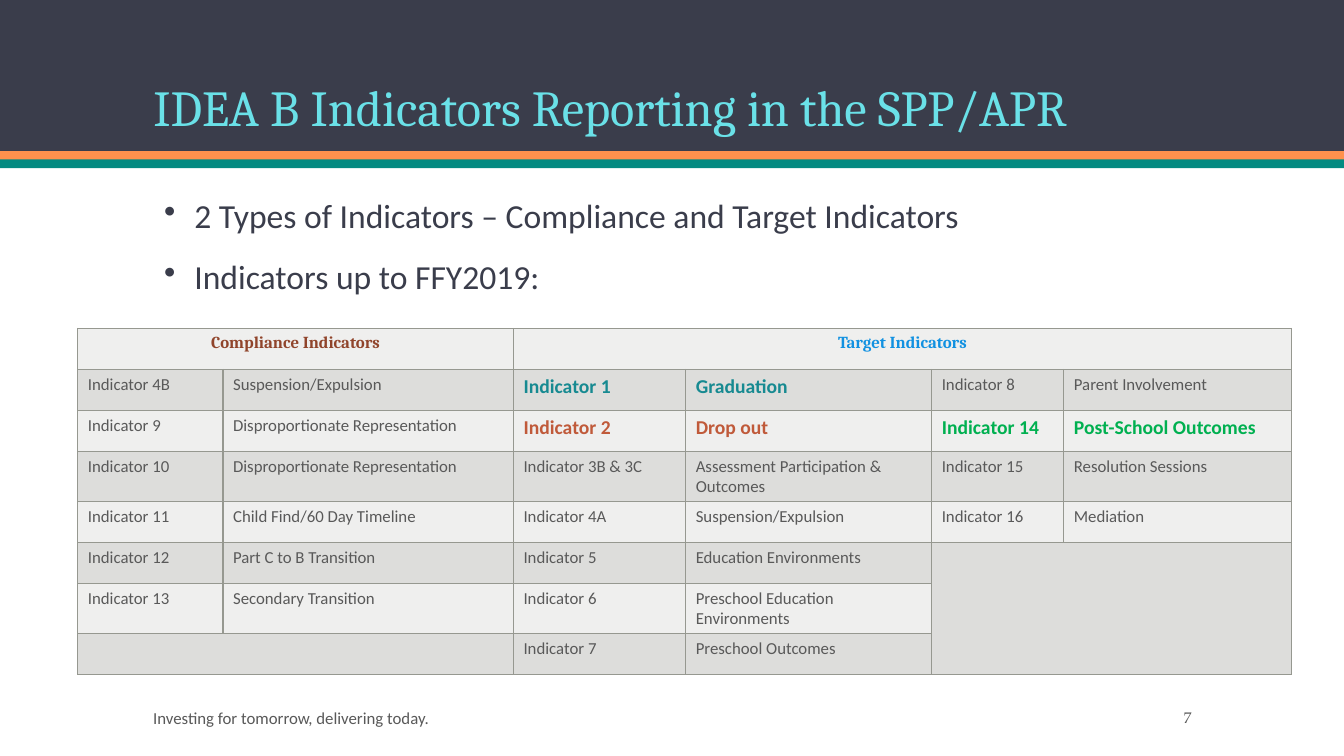
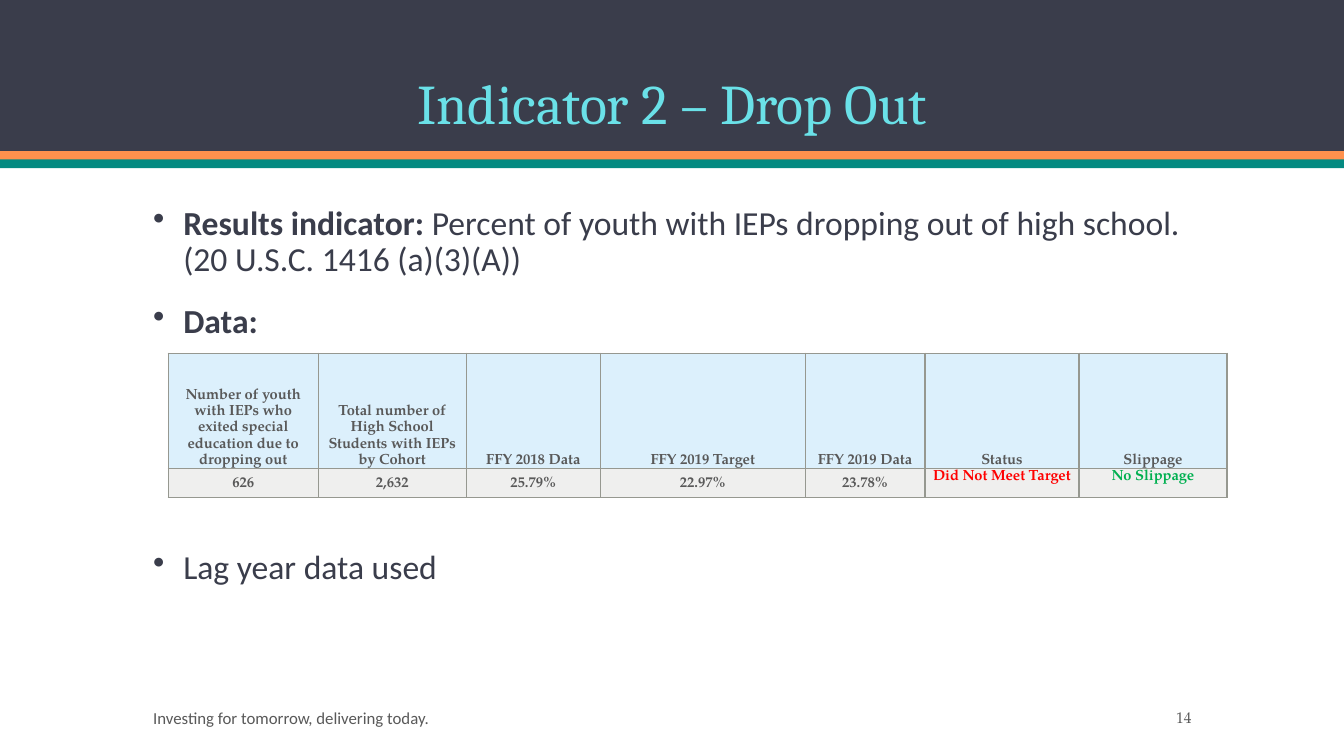
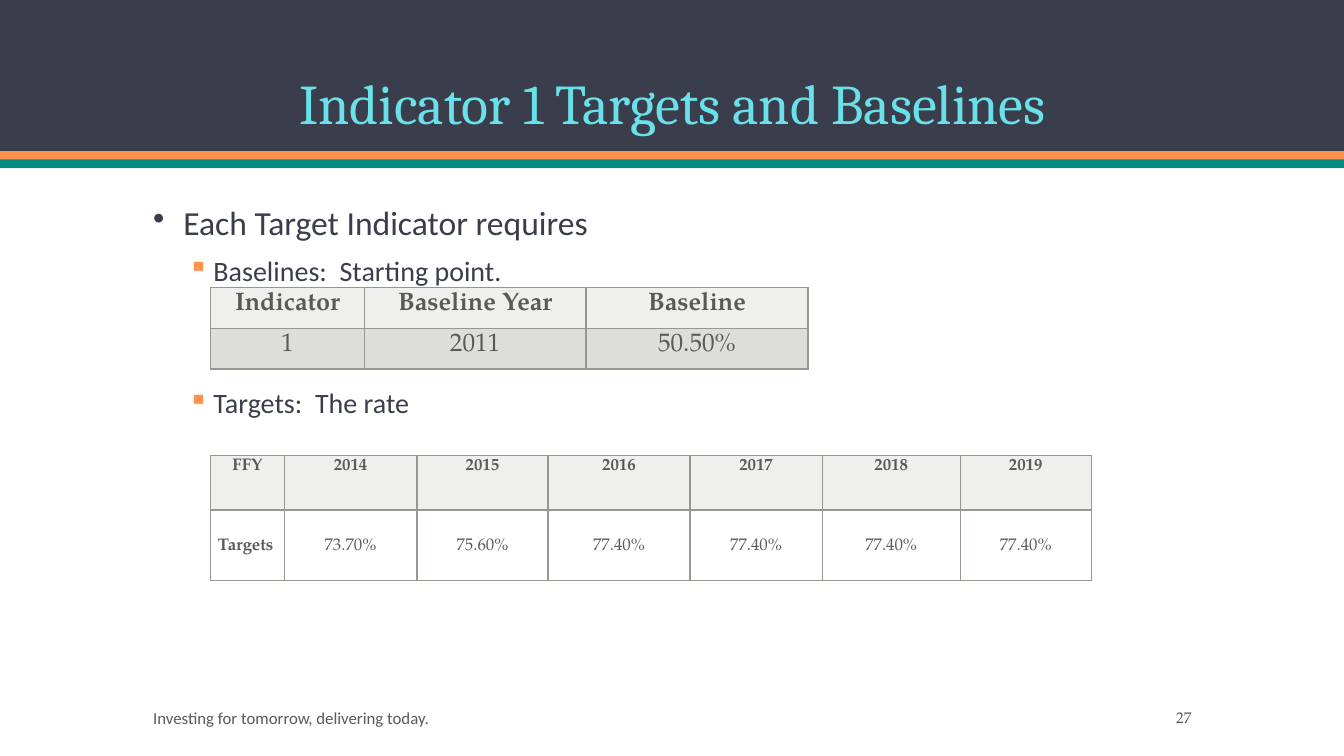
"""Build three slides on indicator reporting, drop-out data and targets."""
from dataclasses import dataclass, replace
from itertools import product

from lxml import etree
from pptx import Presentation
from pptx.dml.color import RGBColor
from pptx.enum.shapes import MSO_SHAPE
from pptx.enum.text import MSO_ANCHOR, MSO_AUTO_SIZE, PP_ALIGN
from pptx.oxml.ns import qn
from pptx.util import Cm, Pt

RECTANGLE = MSO_SHAPE.RECTANGLE
LEFT, CENTER, RIGHT = PP_ALIGN.LEFT, PP_ALIGN.CENTER, PP_ALIGN.RIGHT
TOP, MIDDLE, BOTTOM = MSO_ANCHOR.TOP, MSO_ANCHOR.MIDDLE, MSO_ANCHOR.BOTTOM
NO_AUTOFIT = MSO_AUTO_SIZE.NONE
TITLE_ONLY = 5


@dataclass(frozen=True)
class Theme:
    """Colours, fonts and type sizes of the deck."""
    navy: str = "3A3D4B"
    orange: str = "FF914D"
    teal: str = "048A81"
    aqua: str = "6AE1E8"
    gray: str = "595959"
    border: str = "969890"
    light: str = "EFEFEE"
    dark: str = "DDDDDB"
    sky: str = "DCF0FC"
    brown: str = "90442B"
    blue: str = "1191E1"
    sea: str = "178A91"
    rust: str = "C05A3A"
    green: str = "00B050"
    red: str = "FF0000"
    heading: str = "Cambria"
    body: str = "Calibri"
    serif: str = "TeX Gyre Pagella"
    title_size: float = 40
    long_title_size: float = 36
    bullet_size: float = 24
    sub_bullet_size: float = 20
    baseline_size: float = 18
    accent_size: float = 14
    cell_size: float = 12
    number_size: float = 11
    data_size: float = 10.5


THEME = Theme()


@dataclass(frozen=True)
class TextStyle:
    """Look of a run and of the paragraph and cell that hold it."""
    font: str = THEME.body
    size: float = THEME.cell_size
    color: str = THEME.gray
    bold: bool = False
    align: int = LEFT
    anchor: int = TOP
    compact: bool = False


@dataclass(frozen=True)
class BulletLevel:
    """Look of one bullet level."""
    mark: str
    mark_color: str
    size: float
    margin: float
    hanging: float
    gap: float


LEVELS = (
    BulletLevel("•", THEME.navy, THEME.bullet_size, 0.76, 0.76, 18),
    BulletLevel("▪", THEME.orange, THEME.sub_bullet_size, 1.52, 0.64, 10),
)
BANDS = ((0, 3.82, THEME.navy), (3.81, 0.22, THEME.orange), (4.02, 0.22, THEME.teal))


class Deck:
    """Holds the presentation, its theme and the current slide."""

    def __init__(self, theme):
        """Start a wide presentation."""
        self.theme = theme
        self.presentation = Presentation()
        self.presentation.slide_width = Cm(33.87)
        self.presentation.slide_height = Cm(19.05)
        self.slide = None

    def new_slide(self, title, number, size=THEME.title_size, align=CENTER):
        """Add a slide with bands, title, footer and number."""
        layout = self.presentation.slide_layouts[TITLE_ONLY]
        self.slide = self.presentation.slides.add_slide(layout)
        for top, height, color in BANDS:
            self.band(top, height, color)
        self.title(title, size, align)
        self.label("Investing for tomorrow, delivering today.", 3.61, 17.35,
                   TextStyle(anchor=MIDDLE))
        self.label(str(number), 26.47, 3.81,
                   TextStyle(self.theme.serif, self.theme.number_size,
                             align=RIGHT, anchor=MIDDLE))

    def band(self, top, height, color):
        """Draw a full-width band."""
        band = self.slide.shapes.add_shape(
            RECTANGLE, 0, Cm(top), self.presentation.slide_width, Cm(height))
        band.shadow.inherit = False
        band.fill.solid()
        band.fill.fore_color.rgb = RGBColor.from_string(color)
        band.line.fill.background()

    def title(self, text, size, align):
        """Place the title above the bands."""
        title = self.slide.shapes.title
        self.slide.shapes.element.append(title.element)
        title.left, title.top = Cm(3.61), Cm(0.71)
        title.width, title.height = Cm(26.67), Cm(2.87)
        frame = title.text_frame
        frame.auto_size = NO_AUTOFIT
        frame.vertical_anchor = BOTTOM
        paragraph = frame.paragraphs[0]
        paragraph.alignment = align
        paragraph.line_spacing = 0.9
        self.run(paragraph, text, TextStyle(self.theme.heading, size, self.theme.aqua))

    def run(self, paragraph, text, style):
        """Add one styled run."""
        run = paragraph.add_run()
        run.text = text
        run.font.name = style.font
        run.font.size = Pt(style.size)
        run.font.bold = style.bold
        run.font.color.rgb = RGBColor.from_string(style.color)

    def text_frame(self, left, top, width, height):
        """Add a wrapping text box and return its frame."""
        box = self.slide.shapes.add_textbox(Cm(left), Cm(top), Cm(width), Cm(height))
        box.text_frame.word_wrap = True
        return box.text_frame

    def label(self, text, left, width, style):
        """Write a line in the footer row."""
        frame = self.text_frame(left, 17.7, width, 0.76)
        frame.vertical_anchor = style.anchor
        paragraph = frame.paragraphs[0]
        paragraph.alignment = style.align
        self.run(paragraph, text, style)

    def bullets(self, items, left=3.61, top=5.08, height=12.06):
        """Write items of (level, gap or None, (text, bold) runs)."""
        frame = self.text_frame(left, top, 26.67, height)
        for index, (depth, gap, runs) in enumerate(items):
            level = LEVELS[depth]
            paragraph = frame.add_paragraph() if index else frame.paragraphs[0]
            paragraph.level = depth
            paragraph.line_spacing = 0.9
            paragraph.space_before = Pt(gap or level.gap)
            self.bullet_mark(paragraph, level)
            for text, bold in runs:
                self.run(paragraph, text,
                         TextStyle(size=level.size, color=self.theme.navy, bold=bold))

    def bullet_mark(self, paragraph, level):
        """Give a paragraph its hanging bullet."""
        properties = paragraph._p.get_or_add_pPr()
        properties.set("marL", str(Cm(level.margin)))
        properties.set("indent", str(-Cm(level.hanging)))
        color = etree.SubElement(properties, qn("a:buClr"))
        etree.SubElement(color, qn("a:srgbClr"), val=level.mark_color)
        etree.SubElement(properties, qn("a:buChar"), char=level.mark)

    def table(self, left, top, widths, heights, rows, fills, style,
              variants=None, merges=()):
        """Add a table with row fills, cell variants and merged ranges."""
        variants = variants or {}
        table = self.slide.shapes.add_table(
            len(heights), len(widths), Cm(left), Cm(top),
            Cm(sum(widths)), Cm(sum(heights))).table
        table.first_row = table.horz_banding = False
        for column, width in zip(table.columns, widths):
            column.width = Cm(width)
        for row, height in zip(table.rows, heights):
            row.height = Cm(height)
        for r, c in product(range(len(heights)), range(len(widths))):
            self.cell(table.cell(r, c), rows[r][c], fills[r], variants.get((r, c), style))
        for first, last in merges:
            table.cell(*first).merge(table.cell(*last))

    def cell(self, cell, text, fill, style):
        """Format and fill one table cell."""
        properties = cell._tc.get_or_add_tcPr()
        for side in ("a:lnL", "a:lnR", "a:lnT", "a:lnB"):
            line = etree.SubElement(properties, qn(side), w=str(Pt(1)))
            solid = etree.SubElement(line, qn("a:solidFill"))
            etree.SubElement(solid, qn("a:srgbClr"), val=self.theme.border)
        if fill:
            cell.fill.solid()
            cell.fill.fore_color.rgb = RGBColor.from_string(fill)
        else:
            cell.fill.background()
        cell.vertical_anchor = style.anchor
        paragraph = cell.text_frame.paragraphs[0]
        paragraph.alignment = style.align
        if style.compact:
            cell.margin_left = cell.margin_right = Cm(0.18)
            cell.margin_top = cell.margin_bottom = 0
            paragraph.line_spacing = 1.15
            paragraph.space_before = paragraph.space_after = Pt(3)
        if text:
            self.run(paragraph, text, style)


def indicator_overview(deck):
    """Build the slide that lists all indicators."""
    theme = deck.theme
    deck.new_slide("IDEA B Indicators Reporting in the SPP/APR", 7,
                   theme.long_title_size, LEFT)
    rows = (
        ("Compliance Indicators", "", "Target Indicators", "", "", ""),
        ("Indicator 4B", "Suspension/Expulsion", "Indicator 1", "Graduation",
         "Indicator 8", "Parent Involvement"),
        ("Indicator 9", "Disproportionate Representation", "Indicator 2", "Drop out",
         "Indicator 14", "Post-School Outcomes"),
        ("Indicator 10", "Disproportionate Representation", "Indicator 3B & 3C",
         "Assessment Participation & Outcomes", "Indicator 15", "Resolution Sessions"),
        ("Indicator 11", "Child Find/60 Day Timeline", "Indicator 4A",
         "Suspension/Expulsion", "Indicator 16", "Mediation"),
        ("Indicator 12", "Part C to B Transition", "Indicator 5",
         "Education Environments", "", ""),
        ("Indicator 13", "Secondary Transition", "Indicator 6",
         "Preschool Education Environments", "", ""),
        ("", "", "Indicator 7", "Preschool Outcomes", "", ""),
    )
    group = TextStyle(theme.heading, color=theme.brown, bold=True, align=CENTER)
    variants = {(0, 0): group, (0, 2): replace(group, color=theme.blue)}
    for row, column, color in ((1, 2, theme.sea), (2, 2, theme.rust), (2, 4, theme.green)):
        accent = TextStyle(size=theme.accent_size, color=color, bold=True)
        variants[row, column] = variants[row, column + 1] = accent
    deck.table(1.96, 8.28, (3.66, 7.32, 4.34, 6.2, 3.33, 5.74), (1.03,) * 8, rows,
               (theme.light, theme.dark) * 4, TextStyle(), variants,
               (((0, 0), (0, 1)), ((0, 2), (0, 5)), ((5, 4), (7, 5)), ((7, 0), (7, 1))))
    deck.bullets((
        (0, None, (("2 Types of Indicators – Compliance and Target Indicators", False),)),
        (0, None, (("Indicators up to FFY2019:", False),)),
    ), 3.89, 4.9, 5.21)


def drop_out(deck):
    """Build the slide with the drop-out data."""
    theme = deck.theme
    deck.new_slide("Indicator 2 – Drop Out", 14)
    deck.bullets((
        (0, None, (("Results indicator:", True),
                   (" Percent of youth with IEPs dropping out of high school. "
                    "(20 U.S.C. 1416 (a)(3)(A))", False))),
        (0, None, (("Data:", True),)),
        (0, 150, (("Lag year data used", False),)),
    ))
    rows = (
        ("Number of youth with IEPs who exited special education due to dropping out",
         "Total number of High School Students with IEPs by Cohort", "FFY 2018 Data",
         "FFY 2019 Target", "FFY 2019 Data", "Status", "Slippage"),
        ("626", "2,632", "25.79%", "22.97%", "23.78%", "Did Not Meet Target",
         "No Slippage"),
    )
    header = TextStyle(theme.serif, theme.data_size, bold=True, align=CENTER,
                       anchor=BOTTOM, compact=True)
    value = replace(header, anchor=MIDDLE)
    variants = {(0, column): header for column in range(7)}
    variants[1, 5] = replace(header, anchor=TOP, color=theme.red)
    variants[1, 6] = replace(header, anchor=TOP, color=theme.green)
    deck.table(4.24, 8.9, (3.78, 3.73, 3.38, 5.16, 3.02, 3.88, 3.73), (2.9, 0.74),
               rows, (theme.sky, theme.light), value, variants)


def targets_and_baselines(deck):
    """Build the slide with the baseline and the yearly targets."""
    theme = deck.theme
    deck.new_slide("Indicator 1 Targets and Baselines", 27)
    deck.bullets((
        (0, None, (("Each Target Indicator requires", False),)),
        (1, None, (("Baselines:  Starting point.", False),)),
        (1, 73, (("Targets:  The rate", False),)),
    ))
    baseline = TextStyle(theme.serif, theme.baseline_size, align=CENTER)
    deck.table(5.31, 7.24, (3.87, 5.59, 5.59), (1.03, 1.03),
               (("Indicator", "Baseline Year", "Baseline"), ("1", "2011", "50.50%")),
               (theme.light, theme.dark), baseline,
               {(0, column): replace(baseline, bold=True) for column in range(3)})
    target = TextStyle(theme.serif, align=CENTER, anchor=MIDDLE, compact=True)
    year = replace(target, bold=True, anchor=TOP)
    variants = {(0, column): year for column in range(7)}
    variants[1, 0] = replace(target, bold=True, align=LEFT)
    years = tuple(str(number) for number in range(2014, 2020))
    rates = ("73.70%", "75.60%") + ("77.40%",) * 4
    deck.table(5.31, 11.48, (1.85, 3.35, 3.3, 3.58, 3.33, 3.48, 3.3), (1.37, 1.78),
               (("FFY",) + years, ("Targets",) + rates),
               (theme.light, None), target, variants)


def main():
    """Build and save the deck."""
    deck = Deck(THEME)
    indicator_overview(deck)
    drop_out(deck)
    targets_and_baselines(deck)
    deck.presentation.save("out.pptx")


if __name__ == "__main__":
    main()
